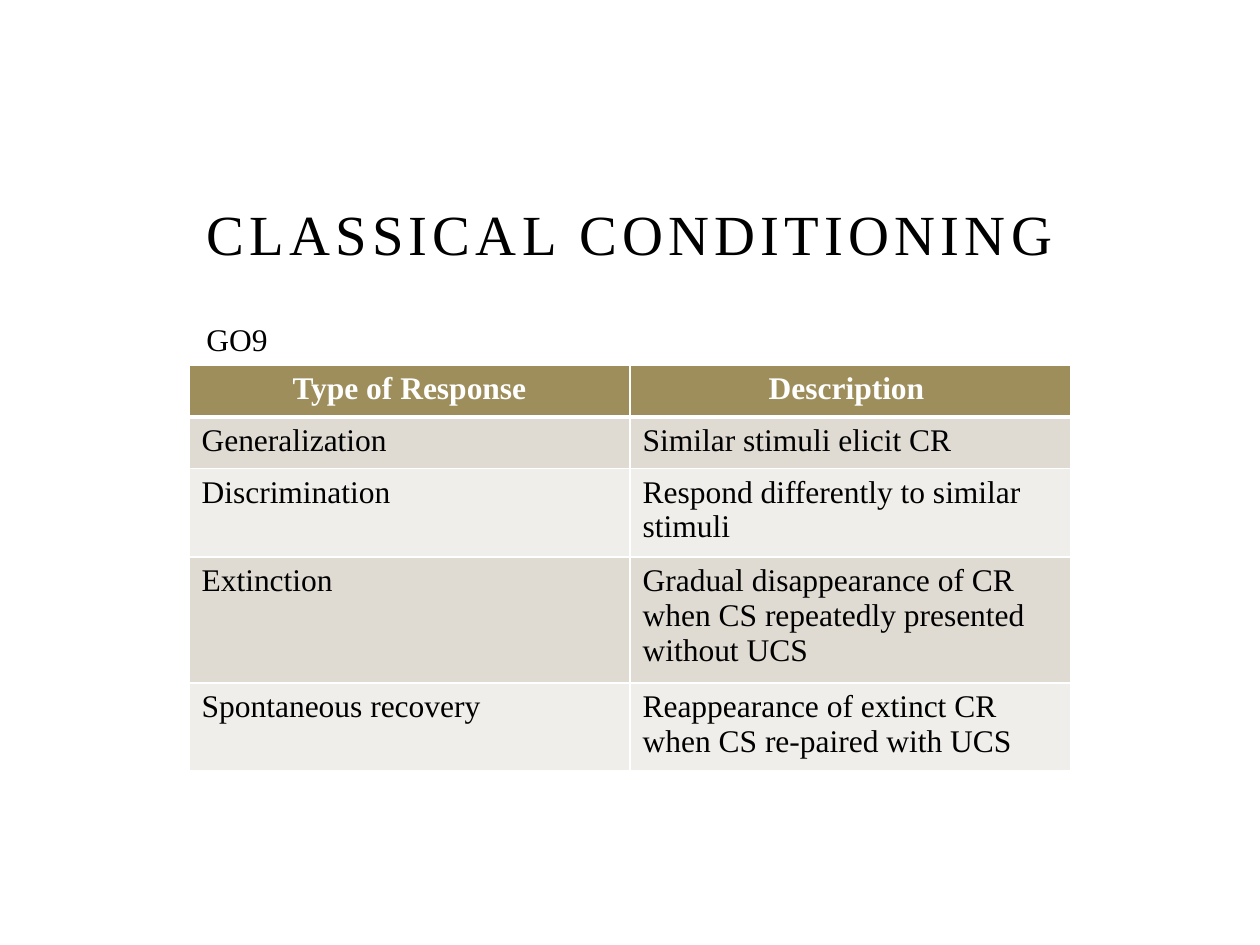
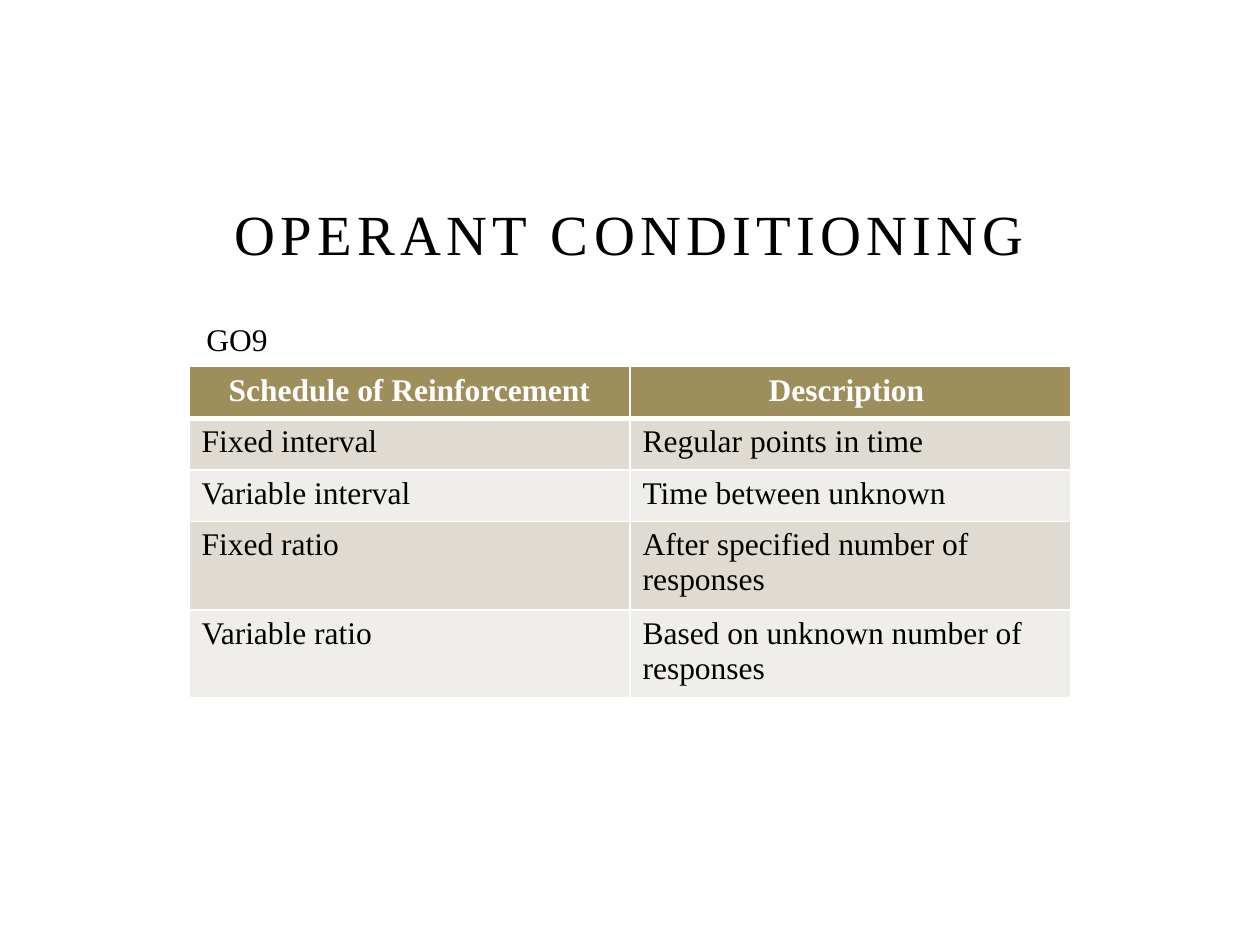
from lxml import etree
from pptx import Presentation
from pptx import util as u
from pptx.dml.color import RGBColor
from pptx.enum import text
from pptx.oxml.ns import qn

SLIDES = [
    {
        "title": "CLASSICAL CONDITIONING",
        "table_top": 2.9,
        "rows": [
            ("Type of Response", "Description "),
            ("Generalization", "Similar stimuli elicit CR"),
            ("Discrimination", "Respond differently to similar stimuli"),
            ("Extinction", "Gradual disappearance of CR when CS repeatedly presented without UCS"),
            ("Spontaneous recovery", "Reappearance of extinct CR when CS re-paired with UCS"),
        ],
    },
    {
        "title": "OPERANT CONDITIONING",
        "table_top": 2.91,
        "rows": [
            ("Schedule of Reinforcement", "Description "),
            ("Fixed interval", "Regular points in time"),
            ("Variable interval", "Time between unknown"),
            ("Fixed ratio", "After specified number of responses"),
            ("Variable ratio", "Based on unknown number of responses"),
        ],
    },
]
OBJECTIVE = "GO9"

FONT = "Times New Roman"
BLACK, WHITE = "000000", "FFFFFF"
HEADER_FILL = "9E8E5C"
BAND_FILLS = ("DFDBD2", "F0EEEA")
TITLE_SIZE, BODY_SIZE, TITLE_SPACING = 32.4, 18, 3
LEFT, CONTENT_WIDTH, ROW_HEIGHT = 1.5, 7, 0.41


def color(value):
    return RGBColor.from_string(value)


def add_run(paragraph, words, size, ink=BLACK, bold=False):
    run = paragraph.add_run()
    run.text = words
    run.font.name = FONT
    run.font.size = u.Pt(size)
    run.font.bold = bold
    run.font.color.rgb = color(ink)
    return run


def add_title(slide, words):
    shape = slide.shapes.add_textbox(u.Inches(LEFT), u.Inches(1.42), u.Inches(CONTENT_WIDTH), u.Inches(0.75))
    frame = shape.text_frame
    frame.word_wrap = True
    frame.margin_left = frame.margin_right = 0
    frame.vertical_anchor = text.MSO_ANCHOR.BOTTOM
    paragraph = frame.paragraphs[0]
    paragraph.alignment = text.PP_ALIGN.CENTER
    run = add_run(paragraph, words, TITLE_SIZE)
    run.font._element.set("spc", str(TITLE_SPACING * 100))


def add_objective(slide):
    shape = slide.shapes.add_textbox(u.Inches(1.54), u.Inches(2.49), u.Inches(0.71), u.Inches(0.4))
    frame = shape.text_frame
    frame.word_wrap = False
    frame.auto_size = text.MSO_AUTO_SIZE.SHAPE_TO_FIT_TEXT
    add_run(frame.paragraphs[0], OBJECTIVE, BODY_SIZE)


def set_borders(cell, bottom_width):
    properties = cell._tc.get_or_add_tcPr()
    widths = {"lnL": 1, "lnR": 1, "lnT": 1, "lnB": bottom_width}
    for position, (side, width) in enumerate(widths.items()):
        line = etree.Element(qn(f"a:{side}"), w=str(u.Pt(width)))
        fill = etree.SubElement(line, qn("a:solidFill"))
        etree.SubElement(fill, qn("a:srgbClr"), val=WHITE)
        properties.insert(position, line)


def add_table(slide, rows, top):
    column_count = len(rows[0])
    table = slide.shapes.add_table(
        len(rows), column_count, u.Inches(LEFT), u.Inches(top),
        u.Inches(CONTENT_WIDTH), u.Inches(ROW_HEIGHT * len(rows)),
    ).table
    for column in table.columns:
        column.width = u.Inches(CONTENT_WIDTH / column_count)
    for row_index, row in enumerate(rows):
        header = row_index == 0
        table.rows[row_index].height = u.Inches(ROW_HEIGHT)
        for column_index, words in enumerate(row):
            cell = table.cell(row_index, column_index)
            cell.fill.solid()
            cell.fill.fore_color.rgb = color(HEADER_FILL if header else BAND_FILLS[(row_index - 1) % 2])
            paragraph = cell.text_frame.paragraphs[0]
            paragraph.alignment = text.PP_ALIGN.CENTER if header else text.PP_ALIGN.LEFT
            add_run(paragraph, words, BODY_SIZE, WHITE if header else BLACK, header)
            set_borders(cell, 3 if header else 1)
            if row_index == 1:
                cell._tc.tcPr.find(qn("a:lnT")).set("w", str(u.Pt(3)))


def main():
    presentation = Presentation()
    presentation.slide_width = u.Inches(10)
    presentation.slide_height = u.Inches(7.5)
    for content in SLIDES:
        slide = presentation.slides.add_slide(presentation.slide_layouts[6])
        add_title(slide, content["title"])
        add_table(slide, content["rows"], content["table_top"])
        add_objective(slide)
    presentation.save("out.pptx")


if __name__ == "__main__":
    main()
